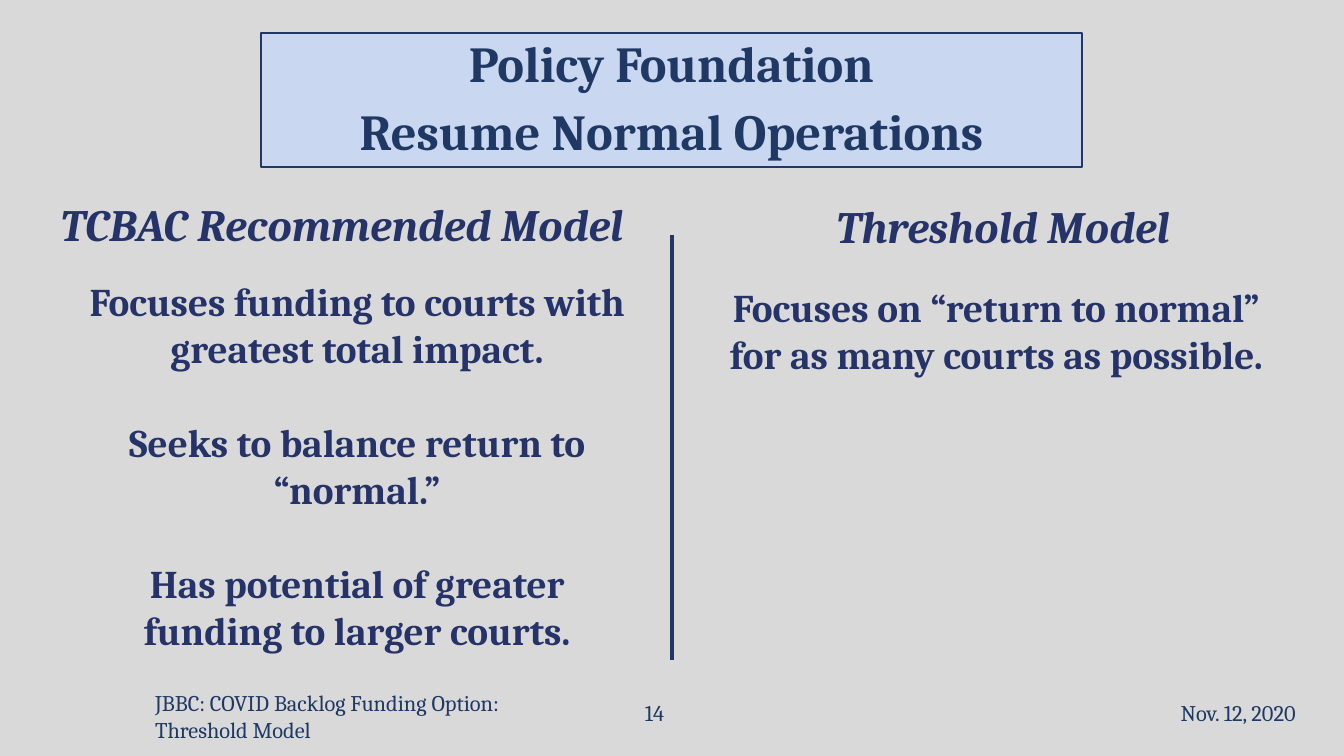
from dataclasses import dataclass

from lxml.etree import SubElement
from pptx import Presentation
from pptx.dml.color import RGBColor
from pptx.enum.shapes import MSO_CONNECTOR, MSO_SHAPE
from pptx.enum.text import MSO_ANCHOR, MSO_AUTO_SIZE, PP_ALIGN
from pptx.oxml.ns import qn
from pptx.util import Cm, Pt


@dataclass(frozen=True)
class Theme:
    font: str = "Cambria"
    background: RGBColor = RGBColor(0xD9, 0xD9, 0xD9)
    banner: RGBColor = RGBColor(0xC9, 0xD8, 0xF0)
    navy: RGBColor = RGBColor(0x20, 0x38, 0x64)
    indigo: RGBColor = RGBColor(0x25, 0x33, 0x69)
    title: int = 36
    heading: int = 32
    body: int = 28
    footer: int = 16


class SlideBuilder:
    def __init__(self, prs, theme):
        self.theme = theme
        self.s = prs.slides.add_slide(prs.slide_layouts[5])
        fill = self.s.background.fill
        fill.solid()
        fill.fore_color.rgb = theme.background

    def set_text(self, tf, text, size, color, bold=False, italic=False,
                 align=PP_ALIGN.CENTER, anchor=MSO_ANCHOR.MIDDLE):
        tf.text = text
        tf.word_wrap = True
        tf.auto_size = MSO_AUTO_SIZE.NONE
        tf.vertical_anchor = anchor
        for p in tf.paragraphs:
            p.alignment = align
            for r in p.runs:
                r.font.name = self.theme.font
                r.font.size = Pt(size)
                r.font.bold = bold
                r.font.italic = italic
                r.font.color.rgb = color

    def title(self, text, x, y, w, h):
        t = self.theme
        sp = self.s.shapes.title
        sp.left, sp.top, sp.width, sp.height = Cm(x), Cm(y), Cm(w), Cm(h)
        sp.fill.solid()
        sp.fill.fore_color.rgb = t.banner
        sp.line.color.rgb = t.navy
        sp.line.width = Pt(1.5)
        self.set_text(sp.text_frame, text, t.title, t.navy, bold=True)
        for p in sp.text_frame.paragraphs:
            p.line_spacing = 0.9
            p.space_before = Pt(10)

    def text_box(self, x, y, w, h):
        return self.s.shapes.add_textbox(Cm(x), Cm(y), Cm(w), Cm(h)).text_frame

    def column_text(self, text, x, y, w, h, size, italic=False):
        tf = self.text_box(x, y, w, h)
        tf.margin_top = tf.margin_bottom = Cm(0.51)
        self.set_text(tf, text, size, self.theme.indigo, bold=True, italic=italic,
                      anchor=MSO_ANCHOR.TOP)
        for p in tf.paragraphs[1:]:
            p.space_before = Pt(33.5)

    def footer(self, text, x, y, w, h, align=PP_ALIGN.CENTER):
        self.set_text(self.text_box(x, y, w, h), text, self.theme.footer,
                      self.theme.navy, align=align)

    def page_number(self, text, x, y, w, h):
        t = self.theme
        sp = self.s.shapes.add_shape(MSO_SHAPE.RECTANGLE, Cm(x), Cm(y), Cm(w), Cm(h))
        sp.shadow.inherit = False
        sp.fill.solid()
        sp.fill.fore_color.rgb = t.background
        sp.line.fill.background()
        self.set_text(sp.text_frame, text, t.footer, t.navy)

    def divider(self, x, top, bottom):
        line = self.s.shapes.add_connector(MSO_CONNECTOR.STRAIGHT,
                                           Cm(x), Cm(top), Cm(x), Cm(bottom))
        line.line.color.rgb = self.theme.navy
        line.line.width = Pt(2.75)
        SubElement(line._element.spPr, qn("a:effectLst"))


def main():
    prs = Presentation()
    prs.slide_width, prs.slide_height = Cm(33.87), Cm(19.05)
    theme = Theme()
    slide = SlideBuilder(prs, theme)

    slide.title("Policy Foundation\nResume Normal Operations", 6.58, 0.84, 20.68, 3.38)

    columns = [
        ("TCBAC Recommended Model", -0.84, 4.45, 1.8, 6.48,
         ["Focuses funding to courts with greatest total impact.",
          "Seeks to balance return to “normal.”",
          "Has potential of greater funding to larger courts."]),
        ("Threshold Model", 15.82, 4.5, 17.91, 6.63,
         ["Focuses on “return to normal” for as many courts as possible."]),
    ]
    for heading, head_x, head_y, body_x, body_y, points in columns:
        slide.column_text(heading, head_x, head_y, 18.92, 1.73, theme.heading, italic=True)
        slide.column_text("\n".join(points), body_x, body_y, 14.4, 4.04, theme.body)
    slide.divider(16.94, 5.92, 16.64)

    slide.footer("JBBC: COVID Backlog Funding Option: Threshold Model",
                 3.66, 17.65, 10.69, 0.79, align=PP_ALIGN.LEFT)
    slide.page_number("14", 15.82, 17.45, 1.35, 1.02)
    slide.footer("Nov. 12, 2020", 29.01, 17.45, 4.39, 1.02)

    prs.save("out.pptx")


if __name__ == "__main__":
    main()
